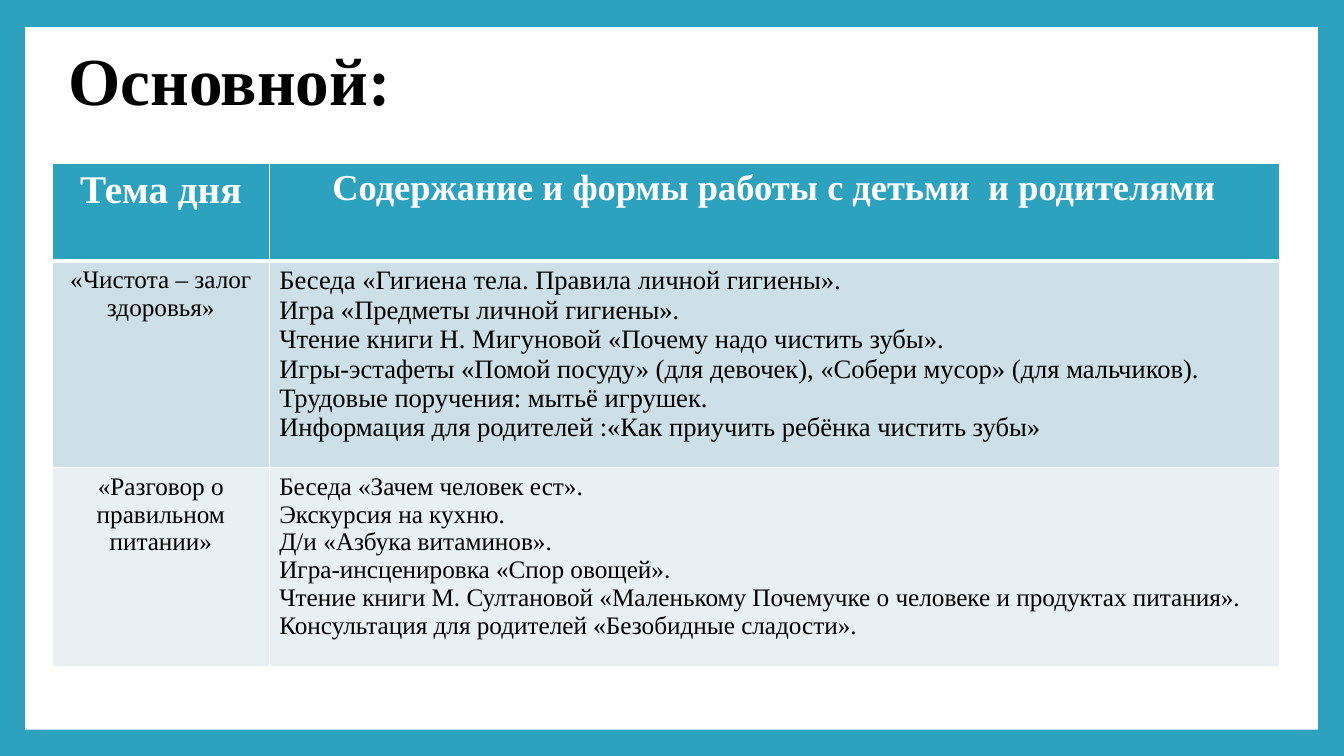
from dataclasses import dataclass

from lxml import etree
from pptx import Presentation
from pptx.dml.color import RGBColor
from pptx.enum import shapes, text
from pptx.oxml import ns
from pptx.util import Inches, Pt

TEAL = RGBColor(0x2D, 0xA2, 0xBF)
WHITE = RGBColor(0xFF, 0xFF, 0xFF)
BLACK = RGBColor(0x00, 0x00, 0x00)
PALE_BLUE = RGBColor(0xCD, 0xE0, 0xE8)
PALE_GREY = RGBColor(0xE8, 0xF0, 0xF4)
FONT = "Times New Roman"
THIN, THICK = 1, 3


@dataclass(frozen=True)
class Entry:
    lines: tuple[str, ...]
    size: int
    centered: bool = True


@dataclass(frozen=True)
class Row:
    height: float
    fill: RGBColor
    theme: Entry
    content: Entry
    color: RGBColor = BLACK
    bold: bool = False
    top_border: int = THIN
    bottom_border: int = THIN


COLUMN_WIDTHS = (2.15, 10.02)
ROWS = (
    Row(0.97, TEAL,
        Entry(("Тема дня",), 28),
        Entry(("Содержание и формы работы с детьми  и родителями",), 26),
        color=WHITE, bold=True, bottom_border=THICK),
    Row(2.05, PALE_BLUE,
        Entry(("«Чистота – залог здоровья»",), 18),
        Entry((
            "Беседа «Гигиена тела. Правила личной гигиены».",
            "Игра «Предметы личной гигиены».",
            "Чтение книги Н. Мигуновой «Почему надо чистить зубы».",
            "Игры-эстафеты «Помой посуду» (для девочек), «Собери мусор» (для мальчиков).",
            "Трудовые поручения: мытьё игрушек.",
            "Информация для родителей :«Как приучить ребёнка чистить зубы»",
        ), 19, centered=False),
        top_border=THICK),
    Row(1.97, PALE_GREY,
        Entry(("«Разговор о правильном питании»",), 18),
        Entry((
            "Беседа «Зачем человек ест».",
            "Экскурсия на кухню.",
            "Д/и «Азбука витаминов».",
            "Игра-инсценировка «Спор овощей».",
            "Чтение книги М. Султановой «Маленькому Почемучке о человеке и продуктах питания».",
            "Консультация для родителей «Безобидные сладости».",
        ), 18, centered=False)),
)


def write_lines(frame, entry: Entry, color: RGBColor, bold: bool) -> None:
    frame.text = "\n".join(entry.lines)
    for paragraph in frame.paragraphs:
        paragraph.alignment = text.PP_ALIGN.CENTER if entry.centered else text.PP_ALIGN.LEFT
        font = paragraph.font
        font.name, font.size, font.bold = FONT, Pt(entry.size), bold
        font.color.rgb = color


def add_borders(cell, top: int, bottom: int) -> None:
    properties = cell._tc.get_or_add_tcPr()
    for side, width in (("L", THIN), ("R", THIN), ("T", top), ("B", bottom)):
        line = etree.SubElement(properties, ns.qn(f"a:ln{side}"), w=str(Pt(width)))
        fill = etree.SubElement(line, ns.qn("a:solidFill"))
        etree.SubElement(fill, ns.qn("a:srgbClr"), val=str(WHITE))


def add_frame(slide) -> None:
    """Leave a teal border around a white page."""
    slide.background.fill.solid()
    slide.background.fill.fore_color.rgb = TEAL
    page = slide.shapes.add_shape(shapes.MSO_SHAPE.RECTANGLE, Inches(0.25), Inches(0.27),
                                  Inches(12.82), Inches(6.97))
    page.shadow.inherit = False
    page.fill.solid()
    page.fill.fore_color.rgb = WHITE
    page.line.fill.background()


def add_title(slide) -> None:
    title = slide.shapes.add_textbox(Inches(0.58), Inches(0.33), Inches(3.43), Inches(0.91))
    title.text_frame.word_wrap = True
    title.text_frame.auto_size = text.MSO_AUTO_SIZE.SHAPE_TO_FIT_TEXT
    write_lines(title.text_frame, Entry(("Основной:",), 48, centered=False), BLACK, bold=True)


def add_plan(slide) -> None:
    plan = slide.shapes.add_table(
        len(ROWS), len(COLUMN_WIDTHS), Inches(0.52), Inches(1.62),
        Inches(sum(COLUMN_WIDTHS)), Inches(sum(row.height for row in ROWS))).table
    for column, width in zip(plan.columns, COLUMN_WIDTHS):
        column.width = Inches(width)
    for table_row, row in zip(plan.rows, ROWS):
        table_row.height = Inches(row.height)
        for cell, entry in zip(table_row.cells, (row.theme, row.content)):
            add_borders(cell, row.top_border, row.bottom_border)
            cell.fill.solid()
            cell.fill.fore_color.rgb = row.fill
            write_lines(cell.text_frame, entry, row.color, row.bold)


def main() -> None:
    presentation = Presentation()
    presentation.slide_width, presentation.slide_height = Inches(13.33), Inches(7.5)
    slide = presentation.slides.add_slide(presentation.slide_layouts[6])
    add_frame(slide)
    add_title(slide)
    add_plan(slide)
    presentation.save("out.pptx")


if __name__ == "__main__":
    main()
